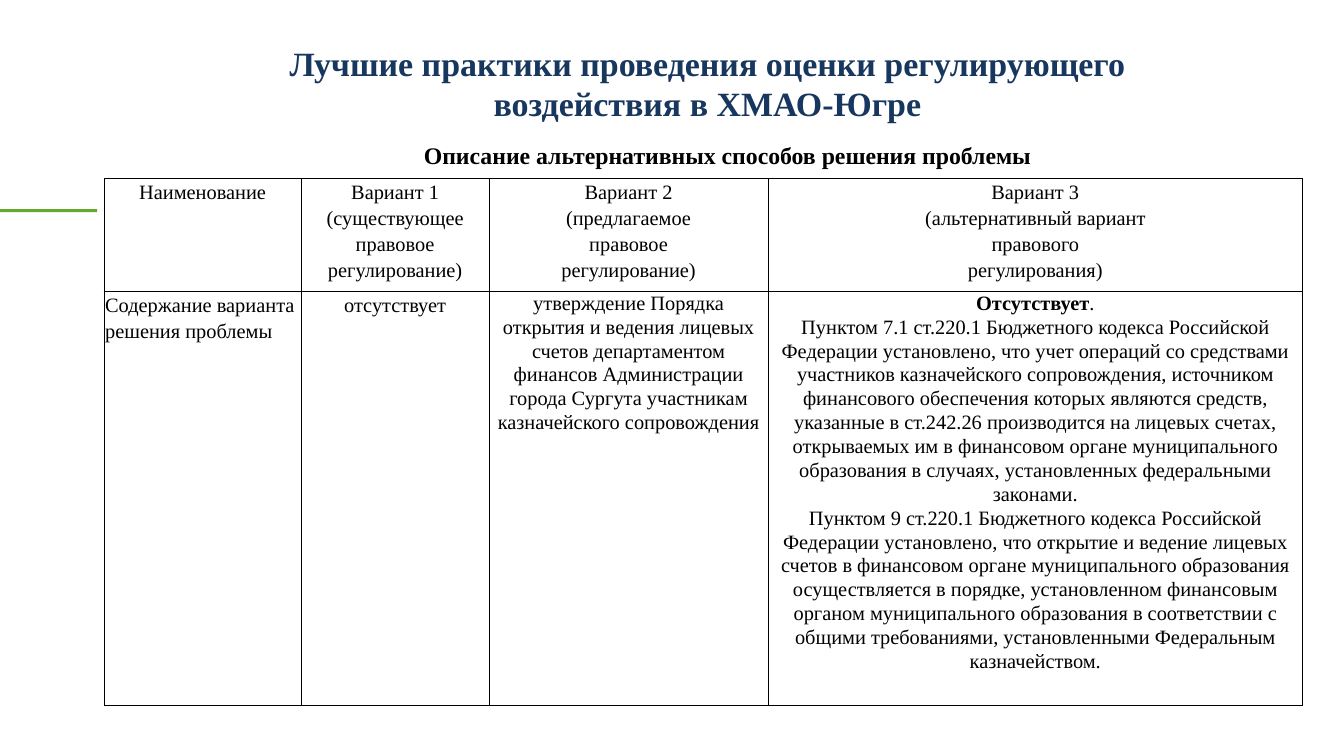
from lxml import etree
from pptx import Presentation
from pptx.dml.color import RGBColor
from pptx.enum.shapes import MSO_SHAPE
from pptx.enum.text import PP_ALIGN
from pptx.oxml.ns import qn
from pptx.util import Inches, Pt

# Content
TITLE = "Лучшие практики проведения оценки регулирующего воздействия в ХМАО-Югре"
SUBTITLE = "Описание альтернативных способов решения проблемы"
HEADER = [
    "Наименование",
    "Вариант 1\n(существующее\nправовое\nрегулирование)",
    "Вариант 2\n(предлагаемое\nправовое\nрегулирование)",
    "Вариант 3\n(альтернативный вариант\nправового\nрегулирования)",
]
VERDICT = "Отсутствует"
REASONS = [
    "Пунктом 7.1 ст.220.1 Бюджетного кодекса Российской Федерации установлено, "
    "что учет операций со средствами участников казначейского сопровождения, "
    "источником финансового обеспечения которых являются средств, указанные в "
    "ст.242.26 производится на лицевых счетах, открываемых им в финансовом органе "
    "муниципального образования в случаях, установленных федеральными законами.",
    "Пунктом 9 ст.220.1 Бюджетного кодекса Российской Федерации установлено, что "
    "открытие и ведение лицевых счетов в финансовом органе муниципального "
    "образования осуществляется в порядке, установленном финансовым органом "
    "муниципального образования в соответствии с общими требованиями, "
    "установленными Федеральным казначейством.",
]
SOLUTION = [
    "Содержание варианта решения проблемы",
    "отсутствует",
    "утверждение Порядка открытия и ведения лицевых счетов департаментом финансов "
    "Администрации города Сургута участникам казначейского сопровождения",
    "\n".join([VERDICT + "."] + REASONS),
]

# Style
FONT = "Times New Roman"
NAVY = RGBColor(0x17, 0x37, 0x5E)
BLACK = RGBColor(0, 0, 0)
GREEN = RGBColor(0x66, 0xA8, 0x2F)
COLUMN_WIDTHS = [3.23, 3.07, 4.57, 8.74]
ROW_HEIGHTS = [1.84, 6.76]


def format_font(font, size, color, bold=False):
    font.name, font.size, font.bold = FONT, Pt(size), bold
    font.color.rgb = color


def add_heading(slide, text, box, size, color):
    heading = slide.shapes.add_textbox(*map(Inches, box)).text_frame
    heading.word_wrap = True
    heading.text = text
    heading.paragraphs[0].alignment = PP_ALIGN.CENTER
    format_font(heading.paragraphs[0].runs[0].font, size, color)
    heading.paragraphs[0].runs[0].font.bold = True


def add_borders(cell):
    properties = cell._tc.get_or_add_tcPr()
    for position, side in enumerate(("a:lnL", "a:lnR", "a:lnT", "a:lnB")):
        line = etree.Element(qn(side), w=str(Pt(1)))
        fill = etree.SubElement(line, qn("a:solidFill"))
        etree.SubElement(fill, qn("a:srgbClr"), val=str(BLACK))
        properties.insert(position, line)


def fill_cell(cell, text, spacing, alignment):
    cell.margin_left = cell.margin_right = Inches(0.02)
    cell.margin_top = cell.margin_bottom = 0
    cell.fill.background()
    add_borders(cell)
    cell.text_frame.text = text
    for paragraph in cell.text_frame.paragraphs:
        paragraph.alignment = alignment
        paragraph.line_spacing = spacing
        for run in paragraph.runs:
            format_font(run.font, 24, BLACK)


def main():
    prs = Presentation()
    prs.slide_width, prs.slide_height = Inches(21.99), Inches(12.37)
    slide = prs.slides.add_slide(prs.slide_layouts[6])

    # Accent bar and headings
    accent = slide.shapes.add_shape(
        MSO_SHAPE.RECTANGLE, 0, Inches(3.42), Inches(1.59), Inches(0.05))
    accent.shadow.inherit = False
    accent.fill.solid()
    accent.fill.fore_color.rgb = GREEN
    accent.line.fill.background()
    add_heading(slide, TITLE, (3.88, 0.64, 15.39, 1.45), 40, NAVY)

    # Table of alternatives
    options = slide.shapes.add_table(
        len(ROW_HEIGHTS), len(COLUMN_WIDTHS), Inches(1.7), Inches(2.92),
        Inches(sum(COLUMN_WIDTHS)), Inches(sum(ROW_HEIGHTS))).table
    options.first_row = options.horz_banding = False
    for column, width in zip(options.columns, COLUMN_WIDTHS):
        column.width = Inches(width)
    for row, height in zip(options.rows, ROW_HEIGHTS):
        row.height = Inches(height)
    for r, texts in enumerate((HEADER, SOLUTION)):
        for c, text in enumerate(texts):
            spacing = 1.06 if r == 1 and c >= 2 else 1.15
            alignment = PP_ALIGN.LEFT if (r, c) == (1, 0) else PP_ALIGN.CENTER
            fill_cell(options.cell(r, c), text, spacing, alignment)

    # Bold verdict followed by a regular full stop
    verdict = options.cell(1, 3).text_frame.paragraphs[0]
    verdict.runs[0].text = VERDICT
    verdict.runs[0].font.bold = True
    stop = verdict.add_run()
    stop.text = "."
    format_font(stop.font, 24, BLACK)

    add_heading(slide, SUBTITLE, (5.01, 2.25, 13.78, 0.57), 28, BLACK)
    prs.save("out.pptx")


if __name__ == "__main__":
    main()
